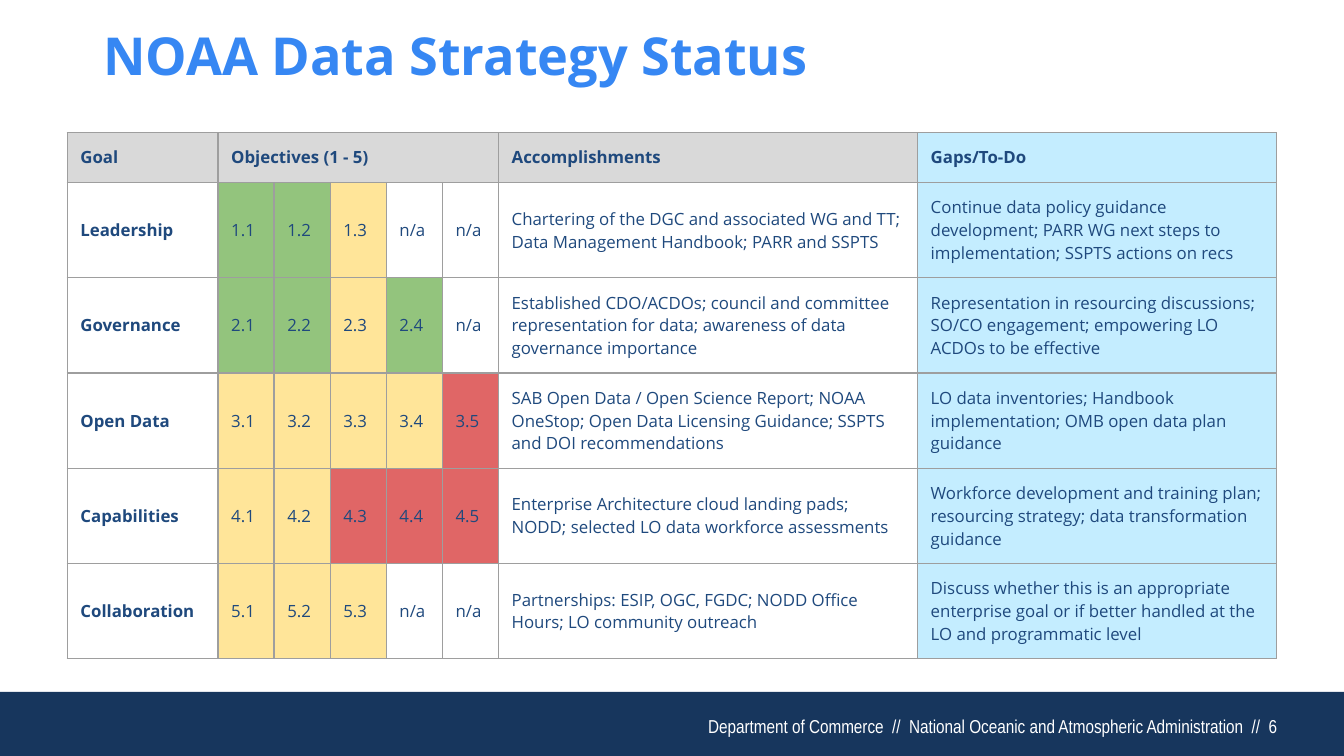
from lxml import etree
from pptx import Presentation
from pptx.dml.color import RGBColor
from pptx.enum.shapes import MSO_SHAPE
from pptx.enum.text import MSO_ANCHOR, PP_ALIGN
from pptx.oxml.ns import qn
from pptx.util import Cm, Pt

RECTANGLE = MSO_SHAPE.RECTANGLE
TOP, MIDDLE = MSO_ANCHOR.TOP, MSO_ANCHOR.MIDDLE
RIGHT = PP_ALIGN.RIGHT

TITLE = "NOAA Data Strategy Status"
FOOTER = "Department of Commerce  //  National Oceanic and Atmospheric Administration  //  6"
HEADERS = {0: "Goal", 1: "Objectives (1 - 5)", 6: "Accomplishments", 7: "Gaps/To-Do"}
OBJECTIVES = 5
GOALS = [
    ("Leadership", ["green", "green", "yellow"],
     "Chartering of the DGC and associated WG and TT; Data Management Handbook; PARR and SSPTS",
     "Continue data policy guidance development; PARR WG next steps to implementation; "
     "SSPTS actions on recs"),
    ("Governance", ["green", "green", "yellow", "green"],
     "Established CDO/ACDOs; council and committee representation for data; "
     "awareness of data governance importance",
     "Representation in resourcing discussions; SO/CO engagement; "
     "empowering LO ACDOs to be effective"),
    ("Open Data", ["yellow", "yellow", "yellow", "yellow", "red"],
     "SAB Open Data / Open Science Report; NOAA OneStop; Open Data Licensing Guidance; "
     "SSPTS and DOI recommendations",
     "LO data inventories; Handbook implementation; OMB open data plan guidance"),
    ("Capabilities", ["yellow", "yellow", "red", "red", "red"],
     "Enterprise Architecture cloud landing pads; NODD; selected LO data workforce assessments",
     "Workforce development and training plan; resourcing strategy; "
     "data transformation guidance"),
    ("Collaboration", ["yellow", "yellow", "yellow"],
     "Partnerships: ESIP, OGC, FGDC; NODD Office Hours; LO community outreach",
     "Discuss whether this is an appropriate enterprise goal or if better handled "
     "at the LO and programmatic level"),
]
COLORS = {
    "title": "3687F3", "text": "1F497D", "footer": "17365D", "white": "FFFFFF",
    "header": "D9D9D9", "gaps": "C4EDFF", "border": "9E9E9E",
    "green": "93C47D", "yellow": "FFE599", "red": "E06666",
}
WIDTHS = [2.85] + [1.06] * OBJECTIVES + [7.92, 6.78]
HEADER_HEIGHT, ROW_HEIGHT = 0.94, 1.8
SLIDE_WIDTH, SLIDE_HEIGHT = 25.4, 14.29
FOOTER_TOP = 13.08
INSET = Cm(0.25)


def color(name):
    """Return the named palette colour."""
    return RGBColor.from_string(COLORS[name])


def set_font(p, size, name, color_name, bold=False):
    """Format all the text of a paragraph."""
    p.font.size, p.font.name, p.font.bold = Pt(size), name, bold
    p.font.color.rgb = color(color_name)


def add_borders(cell):
    """Draw a thin line on every side of a cell."""
    tc_pr = cell._tc.get_or_add_tcPr()
    for i, side in enumerate(("lnL", "lnR", "lnT", "lnB")):
        ln = etree.Element(qn(f"a:{side}"), w=str(Pt(0.75)))
        fill = etree.SubElement(ln, qn("a:solidFill"))
        etree.SubElement(fill, qn("a:srgbClr"), val=COLORS["border"])
        tc_pr.insert(i, ln)


def format_cell(cell, text, fill=None, bold=False, anchor=MIDDLE):
    """Fill one table cell with formatted text."""
    cell.text = text
    cell.vertical_anchor = anchor
    cell.margin_left = cell.margin_right = INSET
    cell.margin_top = cell.margin_bottom = INSET
    set_font(cell.text_frame.paragraphs[0], 9, "Open Sans", "text", bold)
    if fill:
        cell.fill.solid()
        cell.fill.fore_color.rgb = color(fill)
    else:
        cell.fill.background()
    add_borders(cell)


def add_title(s):
    """Place and format the title placeholder."""
    sp = s.shapes.title
    sp.left, sp.top, sp.width, sp.height = Cm(1.7), Cm(0.18), Cm(22.4), Cm(1.7)
    tf = sp.text_frame
    tf.text = TITLE
    tf.vertical_anchor = MIDDLE
    tf.margin_left = tf.margin_right = tf.margin_top = tf.margin_bottom = INSET
    p = tf.paragraphs[0]
    p.alignment = PP_ALIGN.LEFT
    set_font(p, 28, "Open Sans", "title", True)


def add_footer(s):
    """Add the footer band and its text."""
    band = s.shapes.add_shape(RECTANGLE, 0, Cm(FOOTER_TOP), Cm(SLIDE_WIDTH),
                              Cm(SLIDE_HEIGHT - FOOTER_TOP))
    band.shadow.inherit = False
    band.fill.solid()
    band.fill.fore_color.rgb = color("footer")
    band.line.fill.background()
    tf = s.shapes.add_textbox(Cm(4.01), Cm(13.51), Cm(20.12), Cm(0.43)).text_frame
    tf.word_wrap = True
    tf.margin_left = tf.margin_right = tf.margin_top = tf.margin_bottom = 0
    p = tf.paragraphs[0]
    p.text = FOOTER
    p.alignment = RIGHT
    set_font(p, 10, "Arial Narrow", "white")


def add_status_table(s):
    """Add the table of goals and objective statuses."""
    heights = [HEADER_HEIGHT] + [ROW_HEIGHT] * len(GOALS)
    table = s.shapes.add_table(len(heights), len(WIDTHS), Cm(1.27), Cm(2.51),
                               Cm(sum(WIDTHS)), Cm(sum(heights))).table
    table.horz_banding = False
    for column, width in zip(table.columns, WIDTHS):
        column.width = Cm(width)
    for row, height in zip(table.rows, heights):
        row.height = Cm(height)

    last = len(WIDTHS) - 1
    for c in range(len(WIDTHS)):
        format_cell(table.cell(0, c), HEADERS.get(c, ""),
                    "gaps" if c == last else "header", True, TOP)
    table.cell(0, 1).merge(table.cell(0, OBJECTIVES))

    for r, (goal, statuses, accomplishments, gaps) in enumerate(GOALS, 1):
        format_cell(table.cell(r, 0), goal, bold=True)
        for c in range(1, OBJECTIVES + 1):
            used = c <= len(statuses)
            format_cell(table.cell(r, c), f"{r}.{c}" if used else "n/a",
                        statuses[c - 1] if used else None)
        format_cell(table.cell(r, last - 1), accomplishments)
        format_cell(table.cell(r, last), gaps, "gaps")


def main():
    """Build the data strategy status slide."""
    prs = Presentation()
    prs.slide_width, prs.slide_height = Cm(SLIDE_WIDTH), Cm(SLIDE_HEIGHT)
    s = prs.slides.add_slide(prs.slide_layouts[5])
    add_footer(s)
    add_title(s)
    add_status_table(s)
    prs.save("out.pptx")


if __name__ == "__main__":
    main()
